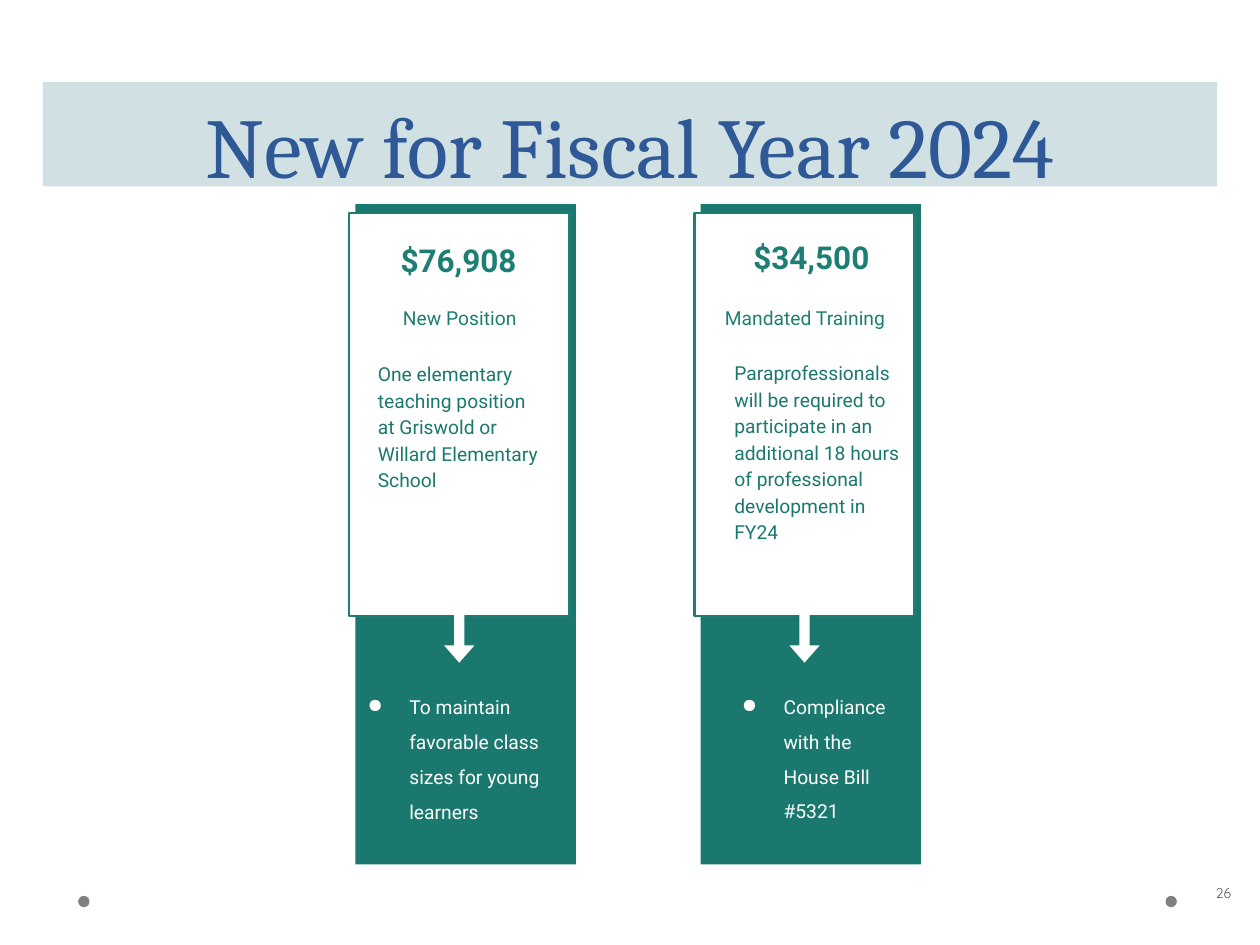
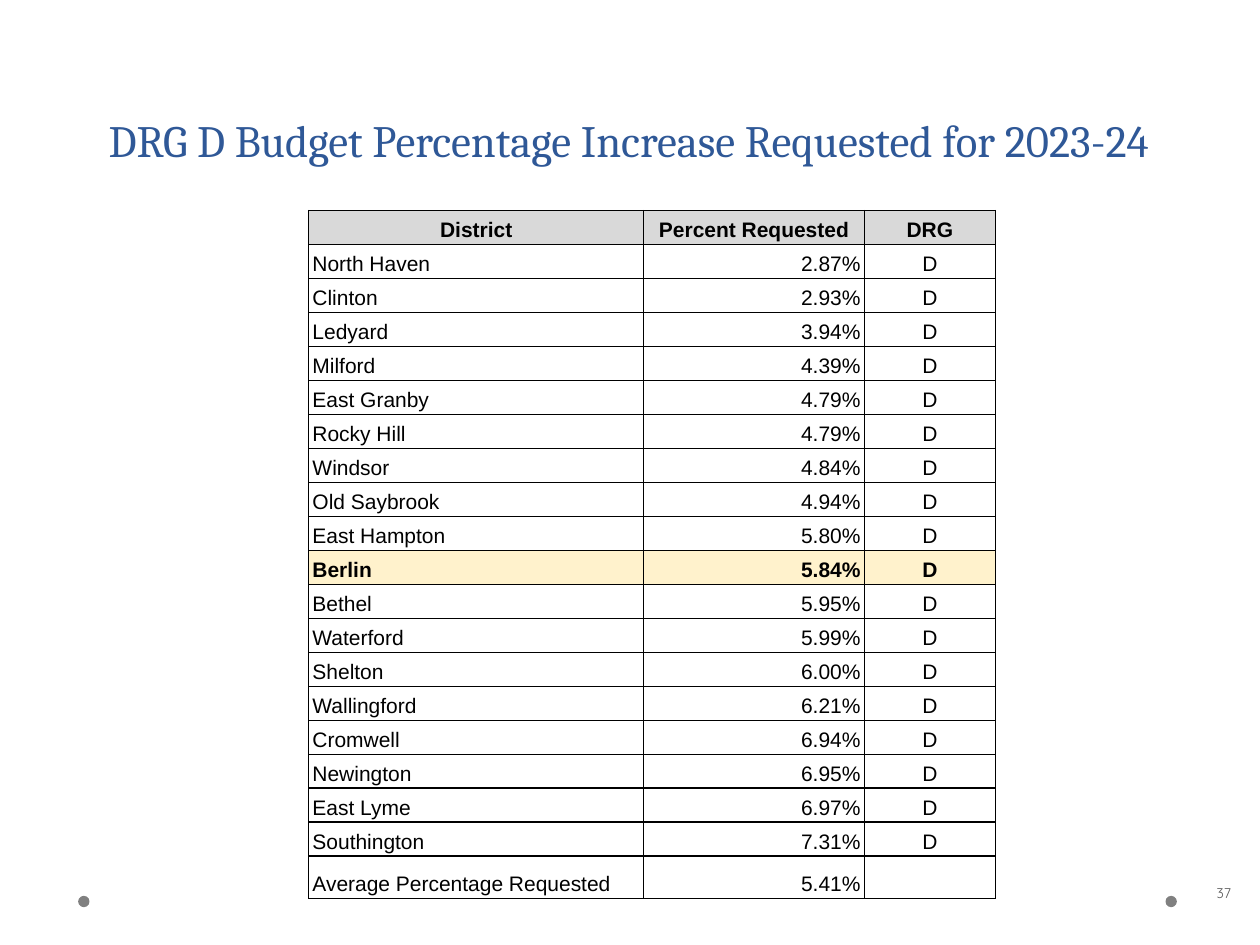
from dataclasses import dataclass
from typing import NamedTuple, Optional

from lxml.etree import SubElement
from pptx import Presentation
from pptx.dml.color import RGBColor
from pptx.enum.shapes import MSO_SHAPE
from pptx.enum.text import MSO_ANCHOR, PP_ALIGN
from pptx.oxml.ns import qn
from pptx.util import Inches, Pt

WIDE, HIGH = Inches(10), Inches(7.5)
COLS, ROWS = 100, 75
LEFT, MID, RIGHT = PP_ALIGN.LEFT, PP_ALIGN.CENTER, PP_ALIGN.RIGHT


@dataclass(frozen=True)
class Theme:
    navy: str = "2F5897"
    band: str = "D0E0E3"
    teal: str = "1B786E"
    edge: str = "1D7E74"
    white: str = "FFFFFF"
    black: str = "000000"
    dot: str = "808080"
    note: str = "595959"
    head: str = "D9D9D9"
    focus: str = "FFF2CC"
    serif: str = "Cambria"
    sans: str = "Roboto"
    grid: str = "Arial"
    round: str = "Quicksand"
    title: float = 48.6
    small: float = 25.6
    sum: float = 18
    body: float = 11
    cell: float = 12
    page: float = 8
    rule: float = 0.83


T = Theme()


class Box(NamedTuple):
    """Left, top, width and height in grid columns and rows."""
    x: float
    y: float
    w: float
    h: float

    def move(self, dx: float) -> "Box":
        return self._replace(x=self.x + dx)


class Type(NamedTuple):
    font: str
    size: float
    color: str
    align: PP_ALIGN = LEFT
    bold: bool = False
    lead: Optional[float] = None  # line spacing: a multiple, or a length from Pt


class Card(NamedTuple):
    """One funding item; its boxes count columns from the card's left edge."""
    sum: str
    label: str
    body: str
    why: str
    sumbox: Box
    bodybox: Box
    whybox: Box


FIRST, STEP = 28.2, 27.4
BACK = Box(0, 16.2, 17.5, 52.4)
FRONT = Box(-0.5, 16.9, 17.5, 32)
LABEL = Box(0.5, 23.4, 15.6, 4.6)
ARROW = Box(5.75, 48.9, 5, 2.4)
DOTS = [Box(x, 71.1, 0.9, 0.9) for x in (6.2, 92.5)]

CARDS = [
    Card("$76,908", "New Position",
         "One elementary teaching position at Griswold or Willard Elementary School",
         "To maintain favorable class sizes for young learners",
         Box(0.4, 18.1, 15.6, 5.9), Box(0.8, 27.5, 14.9, 16.7),
         Box(-1.7, 53.3, 18.5, 13.9)),
    Card("$34,500", "Mandated Training",
         "Paraprofessionals will be required to participate in an additional "
         "18 hours of professional development in FY24",
         "Compliance with the House Bill #5321",
         Box(1, 17.9, 15.6, 5.9), Box(1.7, 27.4, 15.6, 18.6),
         Box(0.6, 53.3, 16.2, 12.6)),
]

HEADS = ("District", "Percent Requested", "DRG")
RATES = {
    "North Haven": "2.87%", "Clinton": "2.93%", "Ledyard": "3.94%",
    "Milford": "4.39%", "East Granby": "4.79%", "Rocky Hill": "4.79%",
    "Windsor": "4.84%", "Old Saybrook": "4.94%", "East Hampton": "5.80%",
    "Berlin": "5.84%", "Bethel": "5.95%", "Waterford": "5.99%",
    "Shelton": "6.00%", "Wallingford": "6.21%", "Cromwell": "6.94%",
    "Newington": "6.95%", "East Lyme": "6.97%", "Southington": "7.31%",
}
MEAN = ("Average Percentage Requested", "5.41%", "")
OURS = "Berlin"
SPANS = (26.6, 17.5, 10.4)
ROW, LAST = 2.56, 3.3


def col(n: float) -> int:
    return round(WIDE * n / COLS)


def row(n: float) -> int:
    return round(HIGH * n / ROWS)


def place(box: Box) -> tuple[int, int, int, int]:
    return col(box.x), row(box.y), col(box.w), row(box.h)


def rgb(code: str) -> RGBColor:
    return RGBColor.from_string(code)


def write(frame, text: str, kind: Type):
    """Set one styled paragraph and return it."""
    frame.text = text
    para = frame.paragraphs[0]
    para.alignment = kind.align
    if kind.lead:
        para.line_spacing = kind.lead
    run = para.runs[0] if para.runs else para.add_run()
    font = run.font
    font.name, font.size, font.bold = kind.font, Pt(kind.size), kind.bold
    font.color.rgb = rgb(kind.color)
    return para


def label(slide, box: Box, text: str, kind: Type,
          anchor: MSO_ANCHOR = MSO_ANCHOR.TOP, pad: float = 1):
    frame = slide.shapes.add_textbox(*place(box)).text_frame
    frame.word_wrap = True
    frame.vertical_anchor = anchor
    frame.margin_left = frame.margin_right = col(1)
    frame.margin_top = frame.margin_bottom = row(pad)
    return write(frame, text, kind)


def block(slide, box: Box, fill: str, line: str = "",
          form: MSO_SHAPE = MSO_SHAPE.RECTANGLE):
    shape = slide.shapes.add_shape(form, *place(box))
    shape.shadow.inherit = False
    shape.fill.solid()
    shape.fill.fore_color.rgb = rgb(fill)
    if line:
        shape.line.color.rgb = rgb(line)
        shape.line.width = Pt(1.5)
    else:
        shape.line.fill.background()
    return shape


def bullet(para, color: str) -> None:
    props = para._p.get_or_add_pPr()
    props.set("marL", str(col(5)))
    props.set("indent", str(-col(3.3)))
    SubElement(SubElement(props, qn("a:buClr")), qn("a:srgbClr"), val=color)
    SubElement(props, qn("a:buChar"), char="●")


def start(deck, page: int):
    """Add a blank slide with the footer dots and page number."""
    slide = deck.slides.add_slide(deck.slide_layouts[6])
    for dot in DOTS:
        block(slide, dot, T.dot, form=MSO_SHAPE.OVAL)
    label(slide, Box(92.7, 68, 6, 5.7), str(page),
          Type(T.round, T.page, T.note, RIGHT), MSO_ANCHOR.MIDDLE)
    return slide


def title(slide, box: Box, text: str, size: float, lead: float,
          anchor: MSO_ANCHOR, pad: float) -> None:
    kind = Type(T.serif, size, T.navy, MID, lead=Pt(lead))
    label(slide, box, text, kind, anchor, pad)


def draw(slide, card: Card, x: float) -> None:
    block(slide, BACK.move(x), T.teal)
    block(slide, FRONT.move(x), T.white, T.edge)
    label(slide, LABEL.move(x), card.label, Type(T.sans, T.body, T.edge, MID))
    label(slide, card.bodybox.move(x), card.body,
          Type(T.sans, T.body, T.teal, lead=1.15))
    label(slide, card.sumbox.move(x), card.sum,
          Type(T.sans, T.sum, T.edge, MID, True))
    arrow = block(slide, ARROW.move(x), T.white, form=MSO_SHAPE.RIGHT_ARROW)
    arrow.rotation = 90
    arrow.adjustments[0], arrow.adjustments[1] = 0.34, 0.57
    why = label(slide, card.whybox.move(x), card.why,
                Type(T.sans, T.body, T.white, lead=1.5))
    bullet(why, T.white)


def border(cell) -> None:
    props = cell._tc.get_or_add_tcPr()
    for side in ("lnL", "lnR", "lnT", "lnB"):
        line = SubElement(props, qn(f"a:{side}"), w=str(Pt(T.rule)))
        fill = SubElement(line, qn("a:solidFill"))
        SubElement(fill, qn("a:srgbClr"), val=T.black)


def chart(slide) -> None:
    """Draw the table of districts, with the home district marked."""
    data = [HEADS, *((name, rate, "D") for name, rate in RATES.items()), MEAN]
    box = Box(24.5, 16.7, sum(SPANS), ROW * (len(data) - 1) + LAST)
    table = slide.shapes.add_table(len(data), len(HEADS), *place(box)).table
    table.first_row = table.horz_banding = False
    for n, span in enumerate(SPANS):
        table.columns[n].width = col(span)
    tints = {HEADS[0]: T.head, OURS: T.focus}
    for r, line in enumerate(data):
        table.rows[r].height = row(LAST if line is MEAN else ROW)
        tint = tints.get(line[0])
        aligns = (MID,) * 3 if line is HEADS else (LEFT, RIGHT, MID)
        for c, (text, align) in enumerate(zip(line, aligns)):
            cell = table.cell(r, c)
            cell.margin_left = cell.margin_right = col(0.3)
            cell.margin_top = cell.margin_bottom = row(0.2)
            cell.vertical_anchor = MSO_ANCHOR.BOTTOM
            border(cell)
            if tint:
                cell.fill.solid()
                cell.fill.fore_color.rgb = rgb(tint)
            else:
                cell.fill.background()
            write(cell.text_frame, text,
                  Type(T.grid, T.cell, T.black, align, bool(tint), 1.15))


def main() -> None:
    deck = Presentation()
    deck.slide_width, deck.slide_height = WIDE, HIGH

    plan = start(deck, 26)
    band = Box(3.4, 6.5, 93.2, 8.3)
    block(plan, band, T.band)
    title(plan, band, "New for Fiscal Year 2024", T.title, 58, MSO_ANCHOR.TOP, 1)
    for n, card in enumerate(CARDS):
        draw(plan, card, FIRST + n * STEP)

    peers = start(deck, 37)
    title(peers, Box(7.4, 6.7, 85, 7.5),
          "DRG D Budget Percentage Increase Requested for 2023-24",
          T.small, 40, MSO_ANCHOR.MIDDLE, 0.5)
    chart(peers)

    deck.save("out.pptx")


if __name__ == "__main__":
    main()
